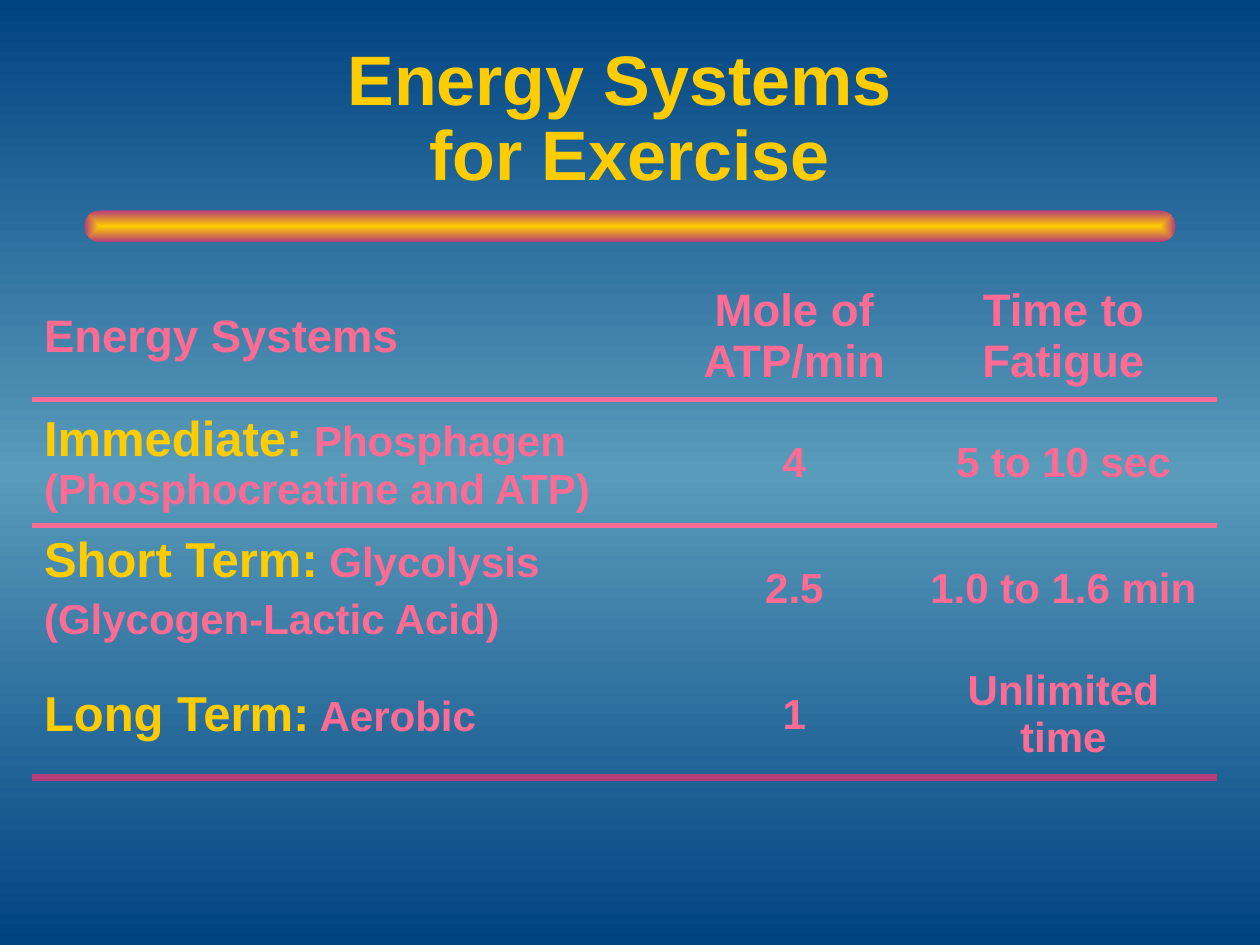
from dataclasses import dataclass

from lxml.etree import SubElement
from pptx import Presentation
from pptx.dml.color import RGBColor
from pptx.enum.shapes import MSO_SHAPE
from pptx.enum.text import MSO_ANCHOR, MSO_AUTO_SIZE, PP_ALIGN
from pptx.oxml.ns import qn
from pptx.util import Inches, Pt

YELLOW, PINK, MAGENTA = "FFCC00", "FF6B93", "B73D7A"
NAVY, SKY = "004382", "599BBA"
NO_TABLE_STYLE = "{2D5ABB26-0587-4C30-8999-92F81FD0307C}"
COLUMN_WIDTHS = (5.14, 1.83, 2.44)
ROW_HEIGHT = 1


@dataclass
class EnergySystem:
    term: str
    name: str
    detail: str
    moles: str
    fatigue: str


SYSTEMS = (
    EnergySystem("Immediate:", " Phosphagen (Phosphocreatine and ATP)", "", "4", "5 to 10 sec"),
    EnergySystem("Short Term:", " Glycolysis", "(Glycogen-Lactic Acid)", "2.5", "1.0 to 1.6 min"),
    EnergySystem("Long Term:", " Aerobic", "", "1", "Unlimited time"),
)


def rgb(color: str) -> RGBColor:
    return RGBColor.from_string(color)


def format_font(font, size: float, color: str) -> None:
    for name, value in {"name": "Arial", "size": Pt(size), "bold": True}.items():
        setattr(font, name, value)
    font.color.rgb = rgb(color)


def set_gradient(fill, owner, colors: tuple, from_center: bool = False) -> None:
    """Spread colors evenly, downwards or outwards from the center."""
    fill.gradient()
    gradient = next(owner.iter(qn("a:gradFill")))
    for child in list(gradient):
        gradient.remove(child)
    stops = SubElement(gradient, qn("a:gsLst"))
    for index, color in enumerate(colors):
        position = 100000 * index // (len(colors) - 1)
        stop = SubElement(stops, qn("a:gs"), pos=str(position))
        SubElement(stop, qn("a:srgbClr"), val=color)
    if from_center:
        direction = SubElement(gradient, qn("a:path"), path="shape")
        SubElement(direction, qn("a:fillToRect"), l="50000", t="50000", r="50000", b="50000")
    else:
        SubElement(gradient, qn("a:lin"), ang="5400000", scaled="0")


def add_run(paragraph, text: str, size: float, color: str = PINK) -> None:
    run = paragraph.add_run()
    run.text = text
    format_font(run.font, size, color)


def add_border(cell, side: str, color: str, width: float) -> None:
    properties = cell._tc.get_or_add_tcPr()
    line = SubElement(properties, qn(f"a:{side}"), w=str(Pt(width)))
    fill = SubElement(line, qn("a:solidFill"))
    SubElement(fill, qn("a:srgbClr"), val=color)
    properties.insert(0, line)


def add_title(slide) -> None:
    title = slide.shapes.title
    place = {"left": 0.87, "top": 0.33, "width": 8.25, "height": 1.25}
    for name, value in place.items():
        setattr(title, name, Inches(value))
    frame = title.text_frame
    frame.auto_size = MSO_AUTO_SIZE.NONE
    frame.vertical_anchor = MSO_ANCHOR.MIDDLE
    frame.text = "Energy Systems \vfor Exercise"
    paragraph = frame.paragraphs[0]
    paragraph.alignment = PP_ALIGN.CENTER
    paragraph.line_spacing = 0.9
    for run in paragraph.runs:
        format_font(run.font, 40, YELLOW)


def add_bar(slide) -> None:
    bar = slide.shapes.add_shape(
        MSO_SHAPE.ROUNDED_RECTANGLE, Inches(0.67), Inches(1.67), Inches(8.66), Inches(0.25)
    )
    bar.adjustments[0] = 0.5
    bar.shadow.inherit = False
    bar.line.fill.background()
    set_gradient(bar.fill, bar._element, (YELLOW, MAGENTA), from_center=True)


def add_energy_table(slide) -> None:
    row_count = len(SYSTEMS) + 1
    frame = slide.shapes.add_table(
        row_count, len(COLUMN_WIDTHS), Inches(0.25), Inches(2.17),
        Inches(sum(COLUMN_WIDTHS)), Inches(ROW_HEIGHT * row_count),
    )
    table = frame.table
    table.first_row = table.horz_banding = False
    next(table._tbl.iter(qn("a:tableStyleId"))).text = NO_TABLE_STYLE
    for column, width in zip(table.columns, COLUMN_WIDTHS):
        column.width = Inches(width)
    for cell in table.iter_cells():
        cell.vertical_anchor = MSO_ANCHOR.MIDDLE
        cell.fill.background()

    for index, text in enumerate(("Energy Systems", "Mole of ATP/min", "Time to Fatigue")):
        add_run(table.cell(0, index).text_frame.paragraphs[0], text, 26)
        add_border(table.cell(0, index), "lnB", PINK, 3)
        add_border(table.cell(1, index), "lnT", PINK, 3)
        add_border(table.cell(row_count - 1, index), "lnB", MAGENTA, 4.5)

    for row, system in enumerate(SYSTEMS, start=1):
        text_frame = table.cell(row, 0).text_frame
        add_run(text_frame.paragraphs[0], system.term, 28, YELLOW)
        add_run(text_frame.paragraphs[0], system.name, 24)
        if system.detail:
            paragraph = text_frame.add_paragraph()
            paragraph.space_before = Pt(5)
            add_run(paragraph, system.detail, 24)
        for column, text in enumerate((system.moles, system.fatigue), start=1):
            add_run(table.cell(row, column).text_frame.paragraphs[0], text, 24)

    for row in range(row_count):
        for column in (1, 2):
            table.cell(row, column).text_frame.paragraphs[0].alignment = PP_ALIGN.CENTER


def main() -> None:
    presentation = Presentation()
    presentation.slide_width = Inches(10)
    presentation.slide_height = Inches(7.5)
    slide = presentation.slides.add_slide(presentation.slide_layouts[5])
    set_gradient(slide.background.fill, slide._element, (NAVY, SKY, NAVY))
    add_bar(slide)
    add_title(slide)
    add_energy_table(slide)
    presentation.save("out.pptx")


if __name__ == "__main__":
    main()
